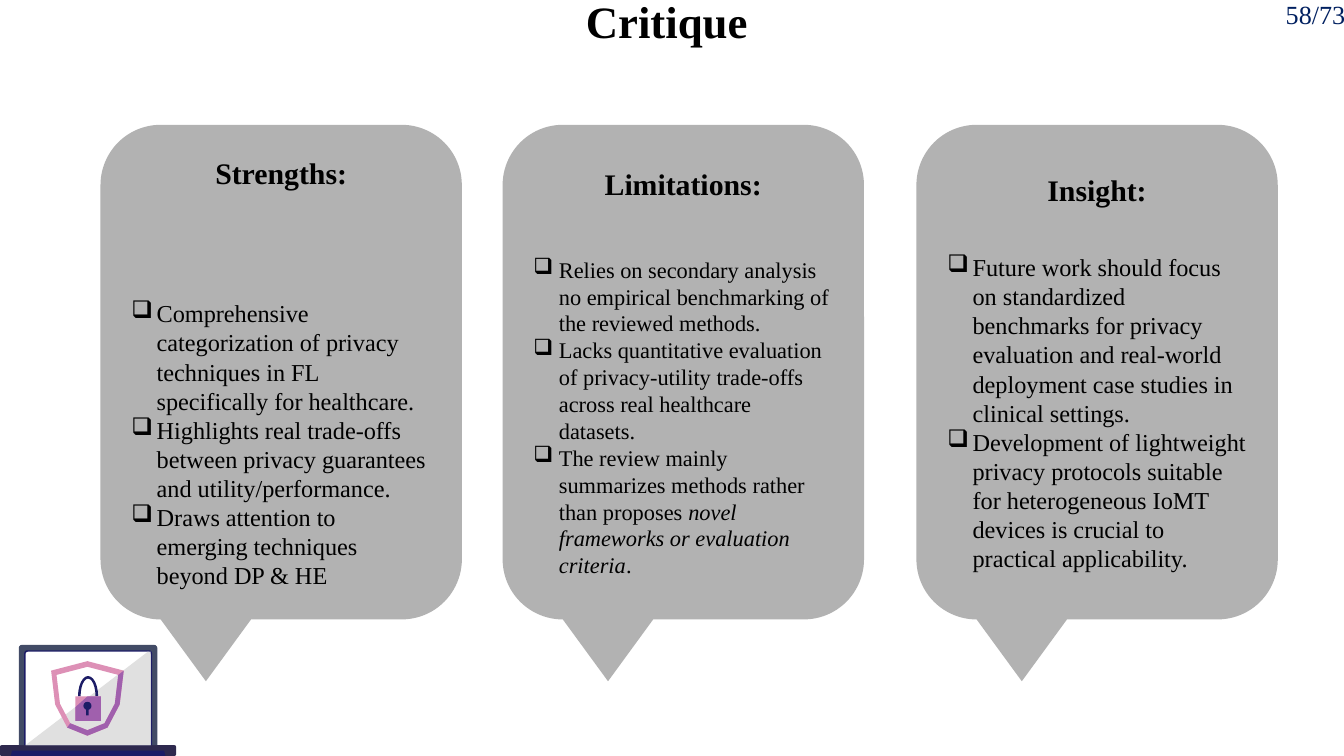
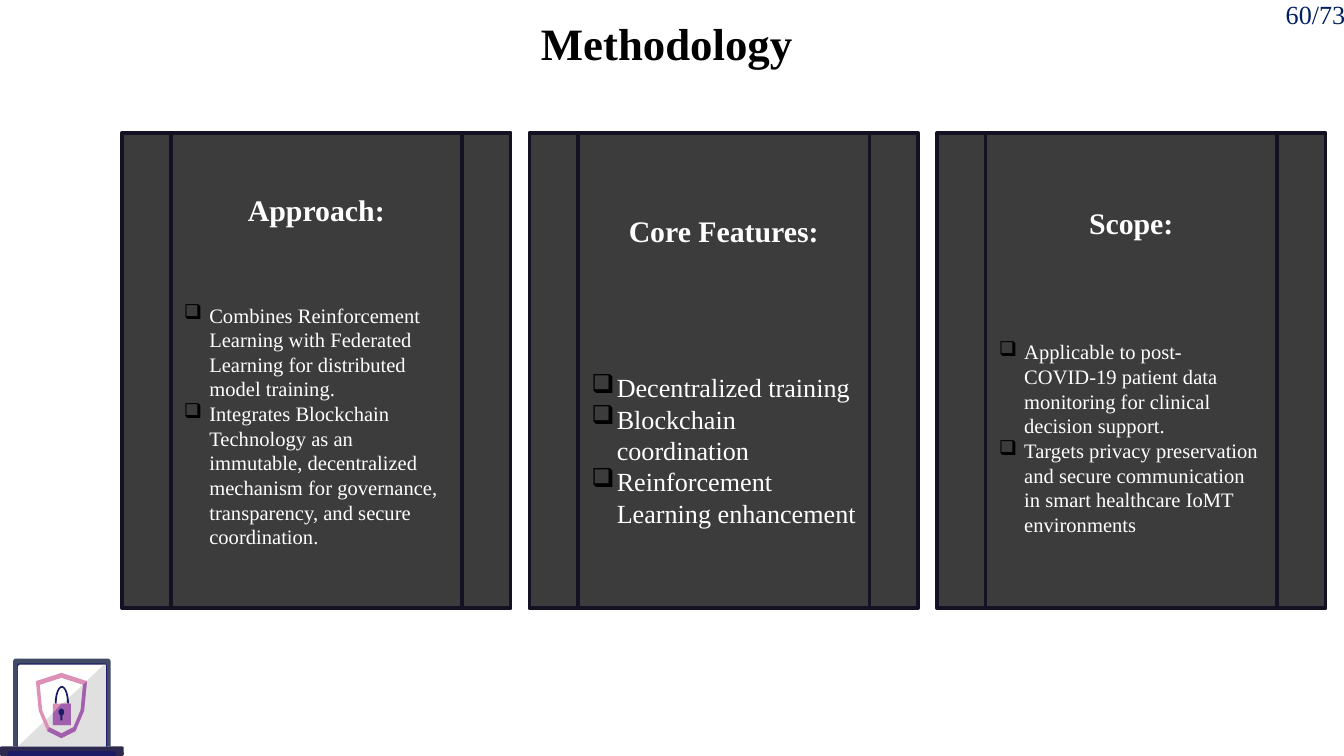
from dataclasses import dataclass

import pptx
import pptx.util
import pptx.dml.color
import pptx.enum.shapes
import pptx.enum.text
import pptx.oxml
import pptx.oxml.ns

Cm, Pt = pptx.util.Cm, pptx.util.Pt
MSO = pptx.enum.shapes.MSO_SHAPE
ALIGN = pptx.enum.text.PP_ALIGN
ANCHOR = pptx.enum.text.MSO_ANCHOR


@dataclass(frozen=True)
class Theme:
    font: str = "Times New Roman"
    title_size: int = 24
    heading_size: int = 16
    page_size: int = 14
    leading: float = 1.2
    black: str = "000000"
    white: str = "FFFFFF"
    page: str = "002060"
    callout: str = "B2B2B2"
    panel: str = "3C3C3C"
    panel_line: str = "141222"
    base: str = "2E294E"
    navy: str = "1C1C66"
    lid: str = "424B66"
    glare: str = "E0E0E0"
    pink: str = "DD90B6"
    purple: str = "A060AD"


T = Theme()
RGB = pptx.dml.color.RGBColor.from_string


def paint(shape, fill, line=None):
    shape.shadow.inherit = False
    shape.fill.solid()
    shape.fill.fore_color.rgb = RGB(fill)
    if line:
        shape.line.color.rgb = RGB(line)
        shape.line.width = Pt(2)
    else:
        shape.line.fill.background()


def write(p, text, size, color, bold=False):
    """Add runs to a paragraph; text between asterisks is italic."""
    for i, part in enumerate(text.split("*")):
        r = p.add_run()
        r.text = part
        r.font.name = T.font
        r.font.size = Pt(size)
        r.font.bold = bold
        r.font.italic = i % 2 == 1
        r.font.color.rgb = RGB(color)


# Laptop icon on a 131 x 82 grid; the shield is half an outline, mirrored and scaled
GRID_W, GRID_H = 131, 82
HALF = [(0, -28), (27, -21), (24, 4), (15, 21), (0, 27)]
OUTER = HALF + [(-x, y) for x, y in HALF[-2:0:-1]]
INNER = [(x * 0.85, y * 0.85) for x, y in OUTER]
RING, SHADE = [
    [[(65 + x, 40 + y) for x, y in outline] for outline in outlines]
    for outlines in ([OUTER, INNER], [OUTER[1:6] + INNER[5:0:-1]])]

# Each part is a colour with a preset and its frame, or with freeform outlines
LAPTOP = [
    (T.base, MSO.ROUNDED_RECTANGLE, (0, 74, 131, 8)),
    (T.navy, MSO.TRAPEZOID, (8, 78, 115, 4)),
    *[(color, MSO.ROUND_2_SAME_RECTANGLE, (14 + d, d, 103 - 2 * d, 74 - d))
      for color, d in ((T.lid, 0), (T.navy, 4), (T.white, 5))],
    (T.glare, None, [[(110, 5), (19, 74), (112, 74), (112, 5)]]),
    (T.pink, None, RING),
    (T.purple, None, SHADE),
    (T.navy, MSO.BLOCK_ARC, (58, 23, 15, 30)),
    (T.pink, MSO.RECTANGLE, (56, 38, 19, 18)),
    (T.purple, None, [[(65, 38), (56, 46), (56, 56), (75, 56), (75, 38)]]),
    (T.navy, MSO.OVAL, (62, 42, 6, 6)),
    (T.navy, MSO.RECTANGLE, (64, 47, 2, 5)),
]

# Slide content; a card is a heading, the gap below it, body size and bullets
SLIDES = [
    dict(
        title="Critique", title_top=-0.41, page="58/73",
        icon=(12.19, 3.33, 2.1),
        shape=MSO.ROUNDED_RECTANGULAR_CALLOUT, box=(2.36, 6.83, 9.35),
        lefts=(1.9, 9.5, 17.32),
        fill=T.callout, line=None, ink=T.black,
        cards=[
            ("Strengths:", 58, 13, [
                "Comprehensive categorization of privacy techniques in FL specifically for healthcare.",
                "Highlights real trade‑offs between privacy guarantees and utility/performance.",
                "Draws attention to emerging techniques beyond DP & HE"]),
            ("Limitations:", 29, 12, [
                "Relies on secondary analysis no empirical benchmarking of the reviewed methods.",
                "Lacks quantitative evaluation of privacy‑utility trade‑offs across real healthcare datasets.",
                "The review mainly summarizes methods rather than proposes "
                "*novel frameworks or evaluation criteria*."]),
            ("Insight:", 24, 13, [
                "Future work should focus on standardized benchmarks for privacy evaluation "
                "and real‑world deployment case studies in clinical settings.",
                "Development of lightweight privacy protocols suitable for heterogeneous "
                "IoMT devices is crucial to practical applicability."]),
        ]),
    dict(
        title="Methodology", title_top=0, page="60/73",
        icon=(12.45, 2.34, 1.84),
        shape=MSO.FLOWCHART_PREDEFINED_PROCESS, box=(2.51, 7.34, 8.99),
        lefts=[2.31 + 7.7 * i for i in range(3)],
        fill=T.panel, line=T.panel_line, ink=T.white,
        cards=[
            ("Approach:", 40, 11, [
                "Combines Reinforcement Learning with Federated Learning for distributed model training.",
                "Integrates Blockchain Technology as an immutable, decentralized mechanism "
                "for governance, transparency, and secure coordination."]),
            ("Core Features:", 66, 14, [
                "Decentralized training",
                "Blockchain coordination",
                "Reinforcement Learning enhancement"]),
            ("Scope:", 53, 11, [
                "Applicable to post-COVID-19 patient data monitoring for clinical decision support.",
                "Targets privacy preservation and secure communication in smart healthcare IoMT environments"]),
        ]),
]

prs = pptx.Presentation()
prs.slide_width, prs.slide_height = Cm(25.4), Cm(14.29)

for content in SLIDES:
    s = prs.slides.add_slide(prs.slide_layouts[5])

    # Title
    title = s.shapes.title
    title.left, title.top = Cm(1.17), Cm(content["title_top"])
    title.width, title.height = Cm(22.86), Cm(1.6)
    tf = title.text_frame
    tf.margin_left = tf.margin_right = tf.margin_top = tf.margin_bottom = Cm(0.25)
    tf.vertical_anchor = ANCHOR.MIDDLE
    tf.paragraphs[0].alignment = ALIGN.CENTER
    write(tf.paragraphs[0], content["title"], T.title_size, T.black, bold=True)

    # Laptop icon
    top, width, height = content["icon"]
    sx, sy = width / GRID_W, height / GRID_H
    icon = s.shapes.add_group_shape()
    for color, preset, geometry in LAPTOP:
        if preset is not None:
            x, y, w, h = geometry
            sp = icon.shapes.add_shape(
                preset, Cm(x * sx), Cm(top + y * sy), Cm(w * sx), Cm(h * sy))
            if preset == MSO.ROUND_2_SAME_RECTANGLE:
                sp.adjustments[0] = 0.03
            elif preset == MSO.BLOCK_ARC:
                sp.adjustments[2] = 0.13
        else:
            builder = None
            for outline in geometry:
                points = [(Cm(x * sx), Cm(y * sy)) for x, y in outline]
                if builder is None:
                    builder = icon.shapes.build_freeform(*points[0])
                else:
                    builder.move_to(*points[0])
                builder.add_line_segments(points[1:], close=True)
            sp = builder.convert_to_shape(0, Cm(top))
        paint(sp, color)

    # Cards
    top, width, height = content["box"]
    for left, (heading, gap, size, bullets) in zip(content["lefts"], content["cards"]):
        sp = s.shapes.add_shape(content["shape"], Cm(left), Cm(top), Cm(width), Cm(height))
        paint(sp, content["fill"], content["line"])
        tf = sp.text_frame
        tf.word_wrap = True
        tf.vertical_anchor = ANCHOR.MIDDLE
        p = tf.paragraphs[0]
        p.alignment = ALIGN.CENTER
        p.line_spacing = Pt(T.heading_size * T.leading)
        write(p, heading, T.heading_size, content["ink"], bold=True)
        for i, text in enumerate(bullets):
            p = tf.add_paragraph()
            p.alignment = ALIGN.LEFT
            p.line_spacing = Pt(size * T.leading)
            p.space_before = Pt(0 if i else gap)
            pPr = p._p.get_or_add_pPr()
            pPr.set("marL", str(Cm(0.48)))
            pPr.set("indent", str(-Cm(0.48)))
            ns = pptx.oxml.ns.nsdecls("a")
            pPr.append(pptx.oxml.parse_xml(
                f'<a:buClr {ns}><a:srgbClr val="{T.black}"/></a:buClr>'))
            pPr.append(pptx.oxml.parse_xml(f'<a:buChar {ns} char="❑"/>'))
            write(p, text, size, content["ink"])

    # Page counter
    tb = s.shapes.add_textbox(Cm(24.05), Cm(-0.15), Cm(1.8), Cm(0.86))
    tb.text_frame.word_wrap = True
    write(tb.text_frame.paragraphs[0], content["page"], T.page_size, T.page)

prs.save("out.pptx")
